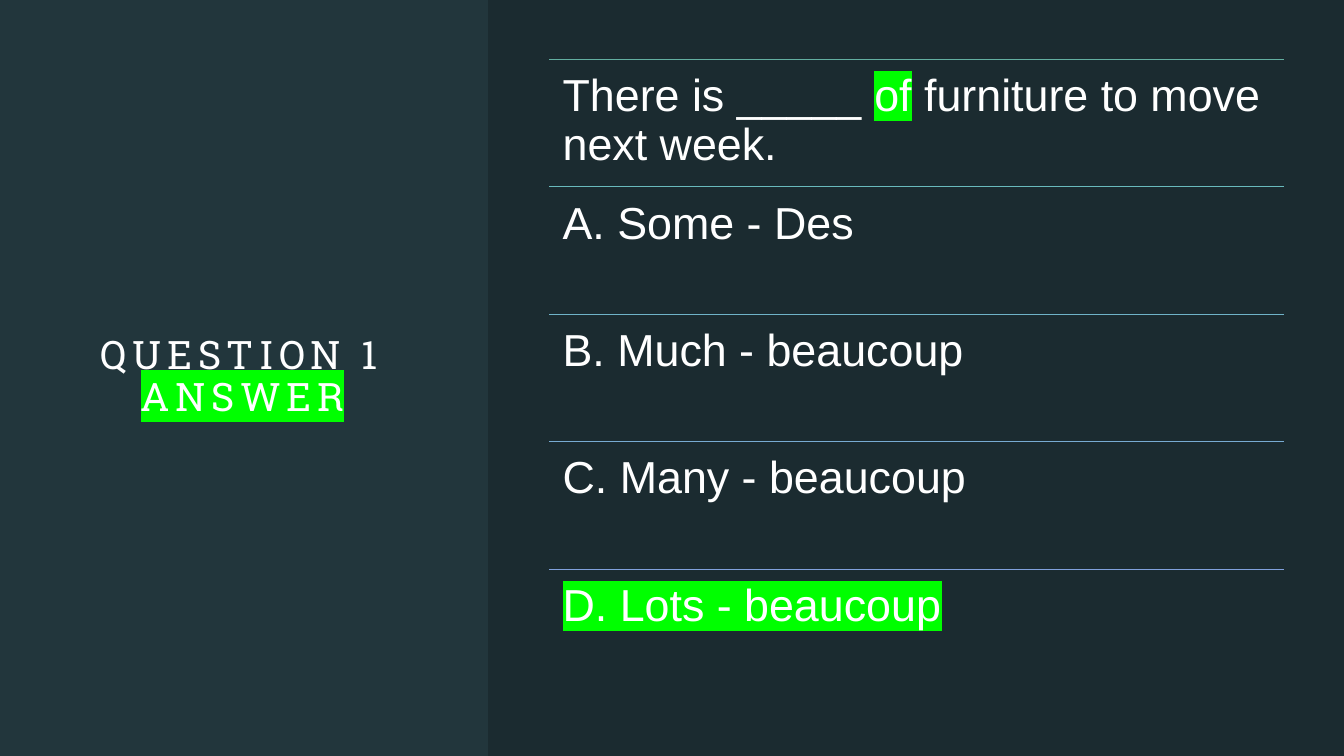
"""Build the answer slide for question 1, with the correct choice highlighted."""
from dataclasses import dataclass

from lxml.etree import SubElement
from pptx import Presentation
from pptx.dml.color import RGBColor as Rgb
from pptx.enum.shapes import MSO_CONNECTOR as Connector, MSO_SHAPE as Shape
from pptx.enum.text import MSO_ANCHOR as Anchor, PP_ALIGN as Align
from pptx.oxml.ns import qn
from pptx.util import Cm, Pt


@dataclass(frozen=True)
class Theme:
    background: str = "22363C"
    panel: str = "000000"
    panel_alpha: int = 20000
    text: str = "FFFFFF"
    highlight: str = "00FF00"
    rules: tuple = ("63AFA1", "69BABC", "70B3C8", "78ABD2", "81A1DC")
    rule_width: float = 0.75
    title_font: str = "Roboto Slab"
    title_size: int = 28
    title_tracking: int = 400
    body_font: str = "Arial"
    body_size: int = 32


theme = Theme()


def add_text(shapes, place, margin, anchor, align, font, spans, tracking=None):
    """Add a text box whose lines are lists of (words, highlighted) spans."""
    box = shapes.add_textbox(*(Cm(length) for length in place))
    frame = box.text_frame
    frame_format = {"word_wrap": True, "vertical_anchor": anchor}
    frame_format |= {f"margin_{side}": Cm(margin) for side in ("left", "top", "right", "bottom")}
    for name, value in frame_format.items():
        setattr(frame, name, value)
    para = frame.paragraphs[0]
    for name, value in {"alignment": align, "line_spacing": 0.9}.items():
        setattr(para, name, value)
    for index, line in enumerate(spans):
        if index:
            para.add_line_break()
        for words, highlighted in line:
            span = para.add_run()
            span.text = words
            for name, value in font.items():
                setattr(span.font, name, value)
            span.font.color.rgb = Rgb.from_string(theme.text)
            properties = span.font._element
            if tracking:
                properties.set("spc", str(tracking))
            if highlighted:
                marker = SubElement(properties, qn("a:highlight"))
                SubElement(marker, qn("a:srgbClr"), val=theme.highlight)
                properties.find(qn("a:solidFill")).addnext(marker)


deck = Presentation()
for name, value in {"slide_width": Cm(33.87), "slide_height": Cm(19.05)}.items():
    setattr(deck, name, value)
page = deck.slides.add_slide(deck.slide_layouts[6])
page.background.fill.solid()
page.background.fill.fore_color.rgb = Rgb.from_string(theme.background)

title_font = {"name": theme.title_font, "size": Pt(theme.title_size)}
title_lines = [[("QUESTION 1", False)], [("ANSWER", True)]]
add_text(page.shapes, (1.5, 3, 9.22, 13.03), 0, Anchor.MIDDLE, Align.CENTER,
         title_font, title_lines, theme.title_tracking)

panel_left = Cm(12.3)
panel = page.shapes.add_shape(Shape.RECTANGLE, panel_left, 0,
                              deck.slide_width - panel_left, deck.slide_height)
panel.shadow.inherit = False
panel.line.fill.background()
panel.fill.solid()
panel.fill.fore_color.rgb = Rgb.from_string(theme.panel)
panel_color = panel.fill._xPr.find(qn("a:solidFill"))[0]
SubElement(panel_color, qn("a:alpha"), val=str(theme.panel_alpha))

rows = [
    [("There is _____ ", False), ("of", True), (" furniture to move next week.", False)],
    [("A. Some - Des", False)],
    [("B. Much - beaucoup", False)],
    [("C. Many - beaucoup", False)],
    [("D. Lots - beaucoup", True)],
]
row_left, row_top, row_width, row_height = 13.84, 1.5, 18.52, 3.21
body_font = {"name": theme.body_font, "size": Pt(theme.body_size)}
choices = page.shapes.add_group_shape()
for index, (row, color) in enumerate(zip(rows, theme.rules)):
    top = row_top + index * row_height
    rule = choices.shapes.add_connector(Connector.STRAIGHT, Cm(row_left), Cm(top),
                                        Cm(row_left + row_width), Cm(top))
    rule.line.width = Pt(theme.rule_width)
    rule.line.color.rgb = Rgb.from_string(color)
    SubElement(rule._element.spPr, qn("a:effectLst"))
    add_text(choices.shapes, (row_left, top, row_width, row_height), 0.34,
             Anchor.TOP, Align.LEFT, body_font, [row])

deck.save("out.pptx")
